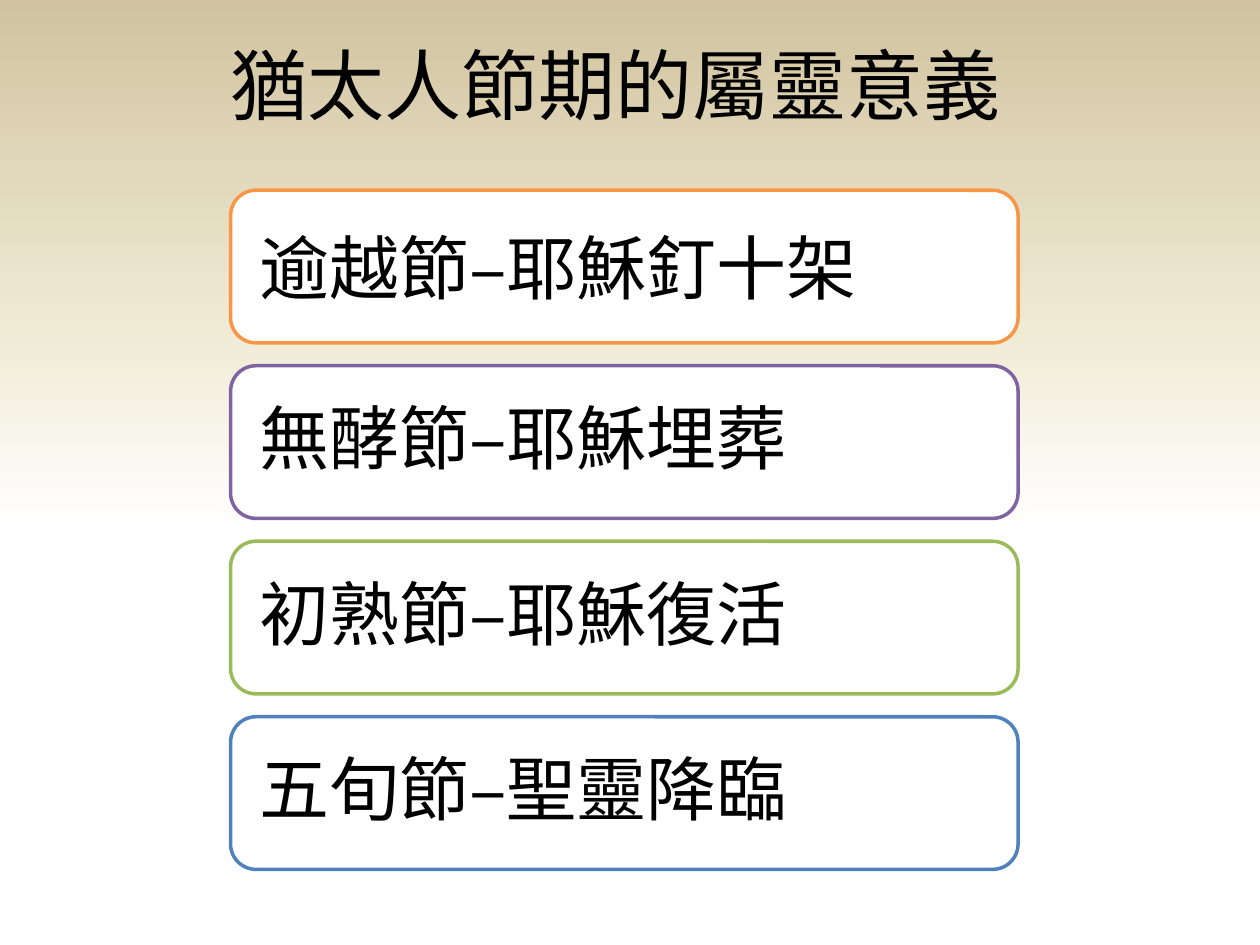
import copy

import pptx
import pptx.dml.color
import pptx.enum.shapes
import pptx.enum.text
import pptx.util

RGB = pptx.dml.color.RGBColor
BLACK = RGB(0x00, 0x00, 0x00)
WHITE = RGB(0xFF, 0xFF, 0xFF)
CREAM = RGB(0xF0, 0xEB, 0xD5)
TAN = RGB(0xD1, 0xC3, 0x9F)
ORANGE = RGB(0xF7, 0x96, 0x46)
PURPLE = RGB(0x80, 0x64, 0xA2)
GREEN = RGB(0x9B, 0xBB, 0x59)
BLUE = RGB(0x4F, 0x81, 0xBD)

FONT = "Calibri"
WIDTH, HEIGHT = 10, 7.5
TITLE_BOX = (0.42, 0.25, 8.93, 0.84)
FEAST_BOX = (1.83, 1.51, 6.25, 5.39)
GAP_SHARE = 0.15  # gap between cards, as a share of a card's height

BACKGROUND_STOPS = [(0.44, WHITE), (0.65, CREAM), (1, TAN)]
FEASTS = [
    ("逾越節–耶穌釘十架", ORANGE, 1),
    ("無酵節–耶穌埋葬", PURPLE, 0.9),
    ("初熟節–耶穌復活", GREEN, 0.9),
    ("五旬節–聖靈降臨", BLUE, 0.9),
]


def inches(*lengths):
    return [pptx.util.Inches(length) for length in lengths]


def add_run(p, text, size):
    r = p.add_run()
    r.text = text
    r.font.name = FONT
    r.font.size = pptx.util.Pt(size)
    r.font.color.rgb = BLACK


def paint_background(s):
    fill = s.background.fill
    fill.gradient()
    fill.gradient_angle = 90
    stop_list = fill._fill._gradFill.gsLst
    stop_list.append(copy.deepcopy(stop_list[0]))
    for stop, (position, color) in zip(fill.gradient_stops, BACKGROUND_STOPS):
        stop.position = position
        stop.color.rgb = color


def place_title(s, box, text):
    title = s.shapes.title
    title.left, title.top, title.width, title.height = inches(*box)
    tf = title.text_frame
    tf.vertical_anchor = pptx.enum.text.MSO_ANCHOR.TOP
    p = tf.paragraphs[0]
    p.alignment = pptx.enum.text.PP_ALIGN.CENTER
    add_run(p, text, 44)


def add_card(s, box, text, color, line_spacing):
    sp = s.shapes.add_shape(
        pptx.enum.shapes.MSO_SHAPE.ROUNDED_RECTANGLE, *inches(*box))
    sp.shadow.inherit = False
    sp.fill.solid()
    sp.fill.fore_color.rgb = WHITE
    sp.line.color.rgb = color
    sp.line.width = pptx.util.Pt(2)
    tf = sp.text_frame
    tf.word_wrap = True
    tf.vertical_anchor = pptx.enum.text.MSO_ANCHOR.MIDDLE
    tf.margin_left = tf.margin_right = pptx.util.Inches(0.17)
    tf.margin_top = tf.margin_bottom = pptx.util.Inches(0.17)
    p = tf.paragraphs[0]
    p.alignment = pptx.enum.text.PP_ALIGN.LEFT
    p.line_spacing = line_spacing
    add_run(p, text, 40)


def place_feasts(s, box, feasts):
    """Stack one card per feast, evenly spaced, to fill the box."""
    left, top, width, height = box
    card_height = height / (len(feasts) + GAP_SHARE * (len(feasts) - 1))
    pitch = card_height * (1 + GAP_SHARE)
    for row, feast in enumerate(feasts):
        add_card(s, (left, top + row * pitch, width, card_height), *feast)


def main():
    prs = pptx.Presentation()
    prs.slide_width, prs.slide_height = inches(WIDTH, HEIGHT)
    s = prs.slides.add_slide(prs.slide_layouts[5])
    paint_background(s)
    place_title(s, TITLE_BOX, "猶太人節期的屬靈意義")
    place_feasts(s, FEAST_BOX, FEASTS)
    prs.save("out.pptx")


if __name__ == "__main__":
    main()
